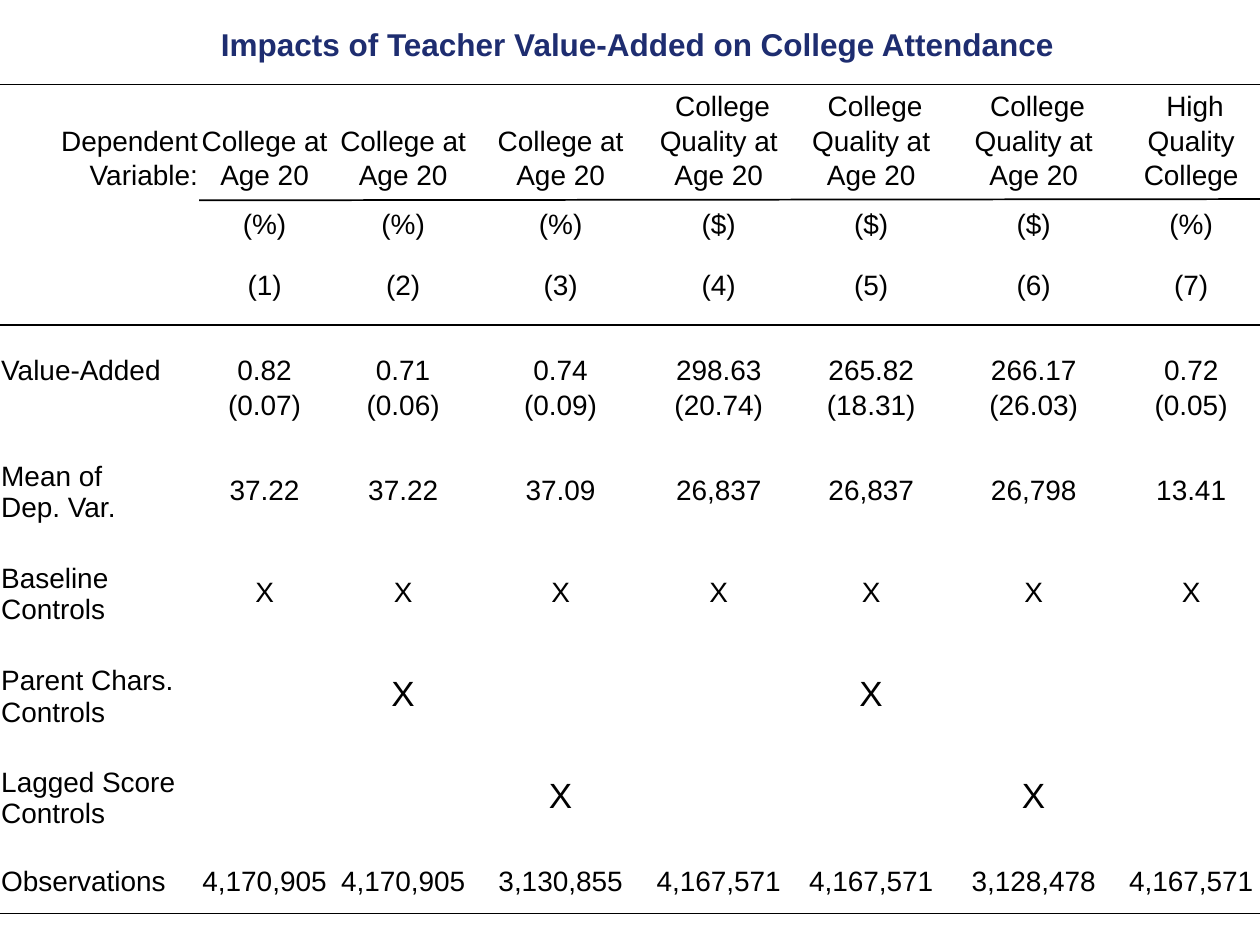
"""Build a slide with a regression table on teacher value-added and college attendance."""
from lxml import etree
from pptx import Presentation
from pptx.dml.color import RGBColor
from pptx.enum.shapes import MSO_CONNECTOR
from pptx.enum.text import MSO_ANCHOR, MSO_AUTO_SIZE, PP_ALIGN
from pptx.oxml.ns import qn
from pptx.util import Inches, Pt

STRAIGHT = MSO_CONNECTOR.STRAIGHT
BOTTOM, MIDDLE = MSO_ANCHOR.BOTTOM, MSO_ANCHOR.MIDDLE
LEFT, CENTER, RIGHT = PP_ALIGN.LEFT, PP_ALIGN.CENTER, PP_ALIGN.RIGHT
FIT_SHAPE = MSO_AUTO_SIZE.SHAPE_TO_FIT_TEXT
COLORS = {"text": "000000", "rule": "000000", "title": "1E2D70"}
FONT = "Arial"
BODY_SIZE, MARK_SIZE, TITLE_SIZE, EMPTY_SIZE = 16, 20, 18, 6

COLUMN_WIDTHS = [1.58, 1.04, 1.16, 1.34, 1.17, 1.25, 1.33, 1.17]
LINE, GAP, THIN, TALL, DOUBLE = Pt(19.8), Inches(0.2), Inches(0.12), Inches(0.54), Inches(0.53)
BLANK = [""] * 8
ROWS = [
    (LINE, BOTTOM, [""] * 4 + [" College"] * 3 + [" High"]),
    (LINE, BOTTOM, ["Dependent"] + ["College at"] * 3 + ["Quality at"] * 3 + ["Quality"]),
    (LINE, MIDDLE, ["Variable:"] + ["Age 20"] * 6 + ["College"]),
    (THIN, MIDDLE, BLANK),
    (LINE, MIDDLE, [""] + ["(%)"] * 3 + ["($)"] * 3 + ["(%)"]),
    (GAP, MIDDLE, BLANK),
    (LINE, BOTTOM, [""] + [f"({number})" for number in range(1, 8)]),
    (GAP, MIDDLE, BLANK),
    (GAP, MIDDLE, BLANK),
    (LINE, BOTTOM, ["Value-Added", "0.82", "0.71", "0.74", "298.63", "265.82", "266.17", "0.72"]),
    (LINE, BOTTOM, ["", "(0.07)", "(0.06)", "(0.09)", "(20.74)", "(18.31)", "(26.03)", "(0.05)"]),
    (LINE, MIDDLE, BLANK),
    (TALL, MIDDLE, ["Mean of\nDep. Var.", "37.22", "37.22", "37.09", "26,837", "26,837", "26,798", "13.41"]),
    (LINE, MIDDLE, BLANK),
    (DOUBLE, MIDDLE, ["Baseline\nControls"] + ["X"] * 7),
    (LINE, MIDDLE, BLANK),
    (TALL, MIDDLE, ["Parent Chars.\nControls", "", "X", "", "", "X", "", ""]),
    (LINE, MIDDLE, BLANK),
    (DOUBLE, MIDDLE, ["Lagged Score\nControls", "", "", "X", "", "", "X", ""]),
    (LINE, MIDDLE, BLANK),
    (LINE, MIDDLE, ["Observations", "4,170,905", "4,170,905", "3,130,855",
                    "4,167,571", "4,167,571", "3,128,478", "4,167,571"]),
]
HEADER_ROWS = 3
LARGE_MARK_ROWS = (16, 18)
RULES = [(0, 0.67, 0.67), (0, 7.25, 7.25), (1.58, 1.59, 1.58), (0, 2.58, 2.58)]


def style_span(span, size, color, bold=False):
    span.font.name = FONT
    span.font.size = Pt(size)
    span.font.bold = bold
    span.font.color.rgb = RGBColor.from_string(COLORS[color])


deck = Presentation()
deck.slide_width, deck.slide_height = Inches(10), Inches(7.5)
page = deck.slides.add_slide(deck.slide_layouts[6])

table_height = sum(height for height, anchor, texts in ROWS)
table = page.shapes.add_table(len(ROWS), len(COLUMN_WIDTHS), 0, Inches(0.7),
                              Inches(sum(COLUMN_WIDTHS)), table_height).table
table.first_row = table.horz_banding = False
for column, width in zip(table.columns, COLUMN_WIDTHS):
    column.width = Inches(width)

for row_index, (height, anchor, texts) in enumerate(ROWS):
    table.rows[row_index].height = height
    for column_index, text in enumerate(texts):
        cell = table.cell(row_index, column_index)
        cell.fill.background()
        cell.margin_left = cell.margin_right = cell.margin_top = Inches(0.01)
        cell.margin_bottom = 0
        is_label = column_index == 0
        cell.vertical_anchor = BOTTOM if "\n" in text else anchor
        cell.text_frame.text = text
        size = MARK_SIZE if row_index in LARGE_MARK_ROWS and not is_label else BODY_SIZE
        label_align = RIGHT if row_index < HEADER_ROWS else LEFT
        for para in cell.text_frame.paragraphs:
            para.alignment = label_align if is_label else CENTER
            for span in para.runs:
                style_span(span, size, "text")
            if not text:
                etree.SubElement(para._p, qn("a:endParaRPr"), sz=str(EMPTY_SIZE * 100))

for start, start_height, end_height in RULES:
    rule = page.shapes.add_connector(STRAIGHT, Inches(start), Inches(start_height),
                                     deck.slide_width, Inches(end_height))
    rule.line.width = Pt(1)
    rule.line.color.rgb = RGBColor.from_string(COLORS["rule"])
    etree.SubElement(rule._element.spPr, qn("a:effectLst"))

title = page.shapes.add_textbox(Inches(1.72), Inches(0.2), Inches(6.68), Inches(0.3))
frame = title.text_frame
frame.margin_left = frame.margin_right = frame.margin_top = frame.margin_bottom = 0
frame.word_wrap = False
frame.auto_size = FIT_SHAPE
frame.text = "Impacts of Teacher Value-Added on College Attendance"
frame.paragraphs[0].alignment = CENTER
style_span(frame.paragraphs[0].runs[0], TITLE_SIZE, "title", bold=True)

deck.save("out.pptx")
